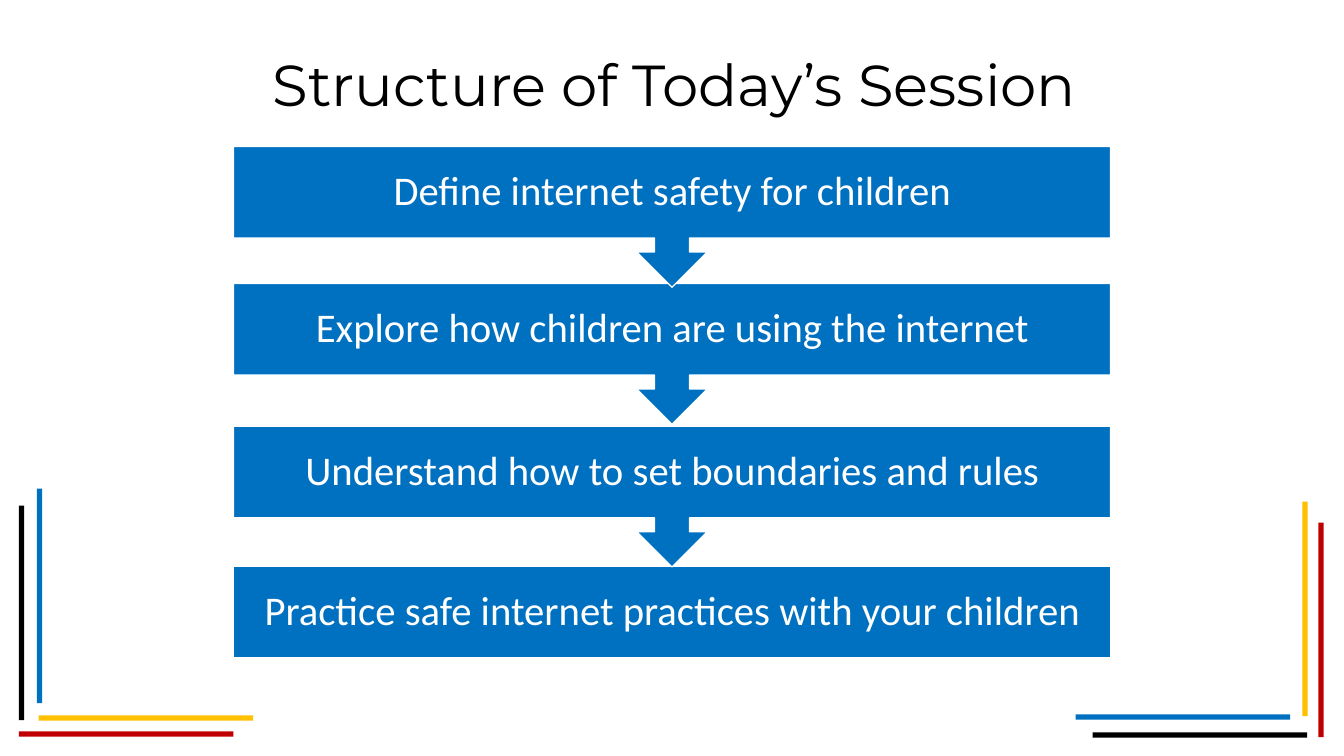
import pptx
import pptx.dml.color
import pptx.enum.shapes
import pptx.enum.text
import pptx.util

RGBColor = pptx.dml.color.RGBColor
Shapes = pptx.enum.shapes.MSO_SHAPE

BLACK = RGBColor(0x00, 0x00, 0x00)
WHITE = RGBColor(0xFF, 0xFF, 0xFF)
RED = RGBColor(0xC0, 0x00, 0x00)
YELLOW = RGBColor(0xFF, 0xC0, 0x00)
BLUE = RGBColor(0x00, 0x70, 0xC0)

COLUMNS, ROWS = 142.2, 80
BAR_LENGTH, BAR_THICKNESS = 22.7, 0.55
STEP_LEFT, STEP_WIDTH = 24.7, 92.8
BOX_HEIGHT, CALLOUT_HEIGHT = 9.7, 14.9

UPRIGHT_BARS = [
    (2, 53.5, BLACK),
    (3.9, 51.7, BLUE),
    (139.5, 55.3, RED),
    (137.8, 53.1, YELLOW),
]
LEVEL_BARS = [
    (2, 77.4, RED),
    (4.1, 75.7, YELLOW),
    (115.6, 77.5, BLACK),
    (113.8, 75.6, BLUE),
]
STEPS = [
    (15.5, "Define internet safety for children"),
    (30, "Explore how children are using the internet"),
    (45.1, "Understand how to set boundaries and rules"),
    (59.9, "Practice safe internet practices with your children"),
]


class SlideBuilder:
    title_font, title_size = "Montserrat", 44
    step_font, step_size = "Calibri", 31

    def __init__(self, presentation):
        self.slide = presentation.slides.add_slide(presentation.slide_layouts[6])
        self.column = presentation.slide_width / COLUMNS
        self.row = presentation.slide_height / ROWS

    def place(self, left, top, width, height):
        return (round(left * self.column), round(top * self.row),
                round(width * self.column), round(height * self.row))

    def set_text(self, shape, text, font, size, color):
        frame = shape.text_frame
        frame.word_wrap = True
        frame.vertical_anchor = pptx.enum.text.MSO_ANCHOR.MIDDLE
        paragraph = frame.paragraphs[0]
        paragraph.text = text
        paragraph.alignment = pptx.enum.text.PP_ALIGN.CENTER
        paragraph.line_spacing = 0.9
        paragraph.font.name = font
        paragraph.font.size = pptx.util.Pt(size)
        paragraph.font.color.rgb = color

    def filled(self, kind, left, top, width, height, color):
        shape = self.slide.shapes.add_shape(kind, *self.place(left, top, width, height))
        shape.shadow.inherit = False
        shape.fill.solid()
        shape.fill.fore_color.rgb = color
        shape.line.fill.background()
        return shape

    def bar(self, left, top, width, height, color):
        self.filled(Shapes.RECTANGLE, left, top, width, height, color)

    def title(self, text, left, top, width, height):
        shape = self.slide.shapes.add_textbox(*self.place(left, top, width, height))
        self.set_text(shape, text, self.title_font, self.title_size, BLACK)

    def step(self, text, top, kind, height):
        shape = self.filled(kind, STEP_LEFT, top, STEP_WIDTH, height, BLUE)
        shape.line.color.rgb = WHITE
        shape.line.width = pptx.util.Pt(1)
        self.set_text(shape, text, self.step_font, self.step_size, WHITE)
        frame = shape.text_frame
        frame.margin_left = frame.margin_right = pptx.util.Inches(0.24)
        frame.margin_top = frame.margin_bottom = pptx.util.Inches(0.24)


def main():
    presentation = pptx.Presentation()
    presentation.slide_width = pptx.util.Inches(14.22)
    presentation.slide_height = pptx.util.Inches(8)
    builder = SlideBuilder(presentation)

    for left, top, color in UPRIGHT_BARS:
        builder.bar(left, top, BAR_THICKNESS, BAR_LENGTH, color)
    for left, top, color in LEVEL_BARS:
        builder.bar(left, top, BAR_LENGTH, BAR_THICKNESS, color)

    builder.title("Structure of Today’s Session", 6.7, 3, 129.4, 12.5)

    *callouts, (last_top, last_text) = STEPS
    builder.step(last_text, last_top, Shapes.RECTANGLE, BOX_HEIGHT)
    for top, text in reversed(callouts):
        builder.step(text, top, Shapes.DOWN_ARROW_CALLOUT, CALLOUT_HEIGHT)

    presentation.save("out.pptx")


if __name__ == "__main__":
    main()
